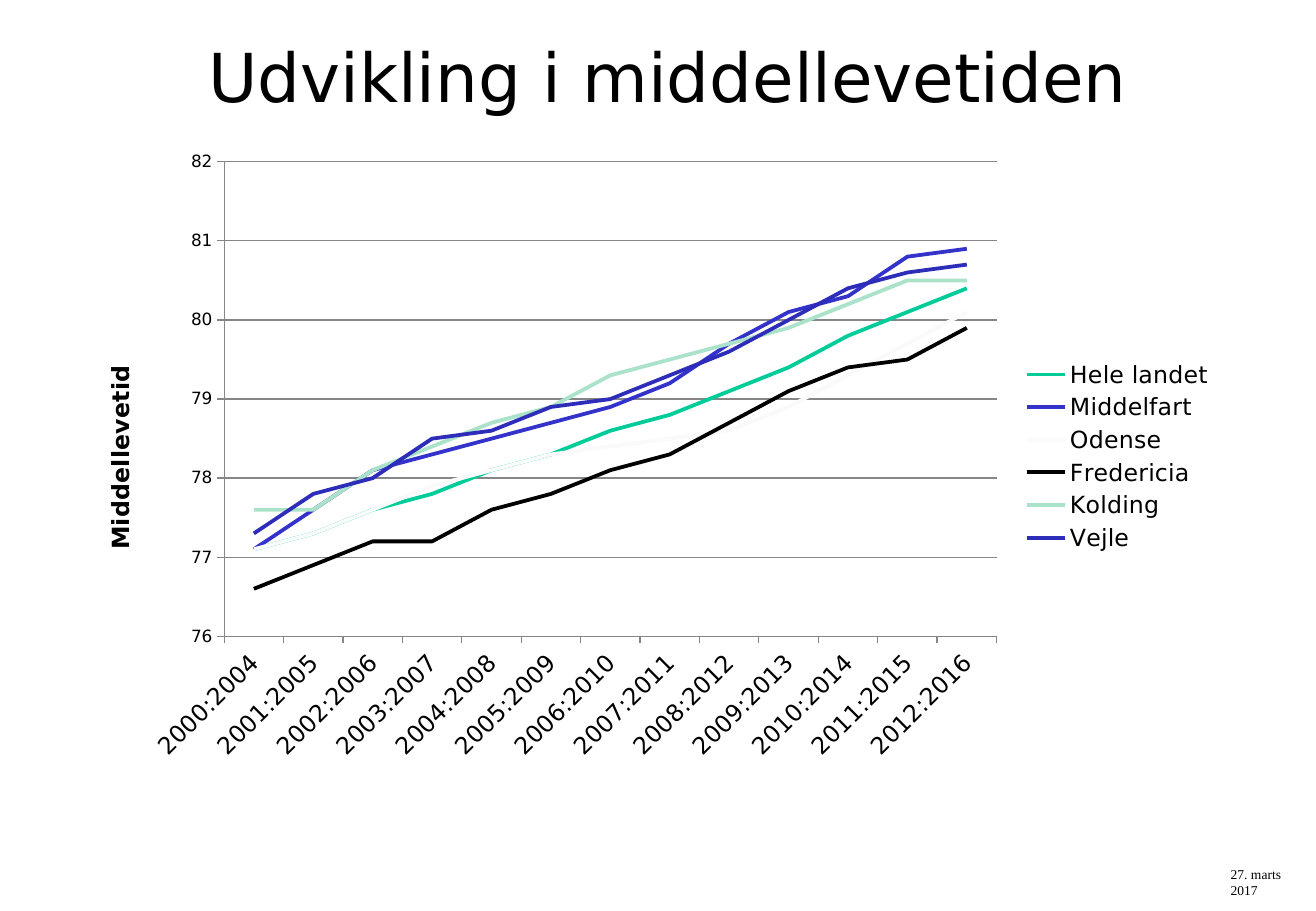
import pptx
import pptx.chart.data
import pptx.dml.color
import pptx.enum.chart
import pptx.enum.text
import pptx.oxml
import pptx.oxml.ns
import pptx.util

COLOURS = {
    "text": "000000",
    "grid": "868686",
    "Hele landet": "00CC99",
    "Middelfart": "3333CC",
    "Odense": "FAFAFA",
    "Fredericia": "000000",
    "Kolding": "AAE2CA",
    "Vejle": "2D2DB9",
}
PERIODS = [f"{year}:{year + 4}" for year in range(2000, 2013)]
LIFE_EXPECTANCY = {
    "Hele landet": [77.1, 77.3, 77.6, 77.8, 78.1, 78.3, 78.6, 78.8, 79.1, 79.4, 79.8, 80.1, 80.4],
    "Middelfart": [77.1, 77.6, 78.1, 78.3, 78.5, 78.7, 78.9, 79.2, 79.7, 80.1, 80.3, 80.8, 80.9],
    "Odense": [77.1, 77.3, 77.6, 77.9, 78.1, 78.3, 78.4, 78.5, 78.6, 78.9, 79.3, 79.7, 80.1],
    "Fredericia": [76.6, 76.9, 77.2, 77.2, 77.6, 77.8, 78.1, 78.3, 78.7, 79.1, 79.4, 79.5, 79.9],
    "Kolding": [77.6, 77.6, 78.1, 78.4, 78.7, 78.9, 79.3, 79.5, 79.7, 79.9, 80.2, 80.5, 80.5],
    "Vejle": [77.3, 77.8, 78, 78.5, 78.6, 78.9, 79, 79.3, 79.6, 80, 80.4, 80.6, 80.7],
}


class SlideBuilder:
    font_name = "DejaVu Sans"

    def __init__(self, slide):
        self.slide = slide

    def colour(self, name):
        return pptx.dml.color.RGBColor.from_string(COLOURS[name])

    def style_font(self, font, size, name=None, bold=False):
        font.size = pptx.util.Pt(size)
        font.name = name or self.font_name
        font.bold = bold
        font.color.rgb = self.colour("text")

    def style_line(self, line, colour, width):
        line.color.rgb = self.colour(colour)
        line.width = pptx.util.Pt(width)

    def add_text(self, box, text, size, font_name=None, alignment=None, anchor=None, wrap=True):
        shape = self.slide.shapes.add_textbox(*map(pptx.util.Inches, box))
        shape.text_frame.word_wrap = wrap
        shape.text_frame.vertical_anchor = anchor
        paragraph = shape.text_frame.paragraphs[0]
        paragraph.alignment = alignment
        run = paragraph.add_run()
        run.text = text
        self.style_font(run.font, size, font_name)

    def set_layout(self, parent, **fractions):
        layout = parent.find(pptx.oxml.ns.qn("c:layout"))
        if layout is not None:
            parent.remove(layout)
        modes = "".join(f'<c:{edge}Mode val="edge"/>' for edge in "xy")
        sizes = "".join(f'<c:{key} val="{value}"/>' for key, value in fractions.items())
        target = '<c:layoutTarget val="inner"/>' if "w" in fractions else ""
        return pptx.oxml.parse_xml(
            f'<c:layout {pptx.oxml.ns.nsdecls("c")}><c:manualLayout>'
            f"{target}{modes}{sizes}</c:manualLayout></c:layout>"
        )

    def add_line_chart(self, box, categories, values_by_name, axis_title):
        data = pptx.chart.data.CategoryChartData(number_format="General")
        data.categories = categories
        for name, values in values_by_name.items():
            data.add_series(name, values)
        frame = self.slide.shapes.add_chart(
            pptx.enum.chart.XL_CHART_TYPE.LINE, *map(pptx.util.Inches, box), data
        )
        chart = frame.chart
        chart.has_title = False
        self.style_font(chart.font, 10)
        plot = chart.plots[0]
        plot.vary_by_categories = False
        for series in plot.series:
            series.smooth = False
            series.marker.style = pptx.enum.chart.XL_MARKER_STYLE.NONE
            self.style_line(series.format.line, series.name, 2.25)

        chart.has_legend = True
        chart.legend.position = pptx.enum.chart.XL_LEGEND_POSITION.RIGHT
        chart.legend.include_in_layout = False
        self.style_font(chart.legend.font, 14)

        for axis, size in ((chart.category_axis, 14), (chart.value_axis, 10)):
            axis.major_tick_mark = pptx.enum.chart.XL_TICK_MARK.OUTSIDE
            self.style_font(axis.tick_labels.font, size)
            self.style_line(axis.format.line, "grid", 0.75)
        chart.category_axis._element.txPr.bodyPr.set("rot", "-2700000")

        value_axis = chart.value_axis
        value_axis.minimum_scale = 76
        value_axis.maximum_scale = 82
        value_axis.major_unit = 1
        value_axis.has_major_gridlines = True
        self.style_line(value_axis.major_gridlines.format.line, "grid", 0.75)
        title = value_axis.axis_title
        run = title.text_frame.paragraphs[0].add_run()
        run.text = axis_title
        self.style_font(run.font, 14, bold=True)
        title.text_frame._txBody.bodyPr.set("rot", "-5400000")
        title.text_frame._txBody.bodyPr.set("vert", "horz")
        title_layout = self.set_layout(title._element, x=0.03, y=0.35)
        title._element.find(pptx.oxml.ns.qn("c:tx")).addnext(title_layout)

        plot_area = chart._chartSpace.chart.plotArea
        plot_area.insert(0, self.set_layout(plot_area, x=0.1375, y=0.035, w=0.665, h=0.75))


def main():
    presentation = pptx.Presentation()
    presentation.slide_width = pptx.util.Inches(10.83)
    presentation.slide_height = pptx.util.Inches(7.5)
    builder = SlideBuilder(presentation.slides.add_slide(presentation.slide_layouts[6]))
    builder.add_text((10.03, 7.08, 0.8, 0.23), "27. marts 2017", 8, "Times New Roman",
                     alignment=pptx.enum.text.PP_ALIGN.LEFT, wrap=False)
    builder.add_text((0.89, 0, 9.21, 1.25), "Udvikling i middellevetiden", 40,
                     alignment=pptx.enum.text.PP_ALIGN.CENTER,
                     anchor=pptx.enum.text.MSO_ANCHOR.MIDDLE)
    builder.add_line_chart((0.53, 1.15, 9.56, 5.21), PERIODS, LIFE_EXPECTANCY, "Middellevetid")
    presentation.save("out.pptx")


if __name__ == "__main__":
    main()
